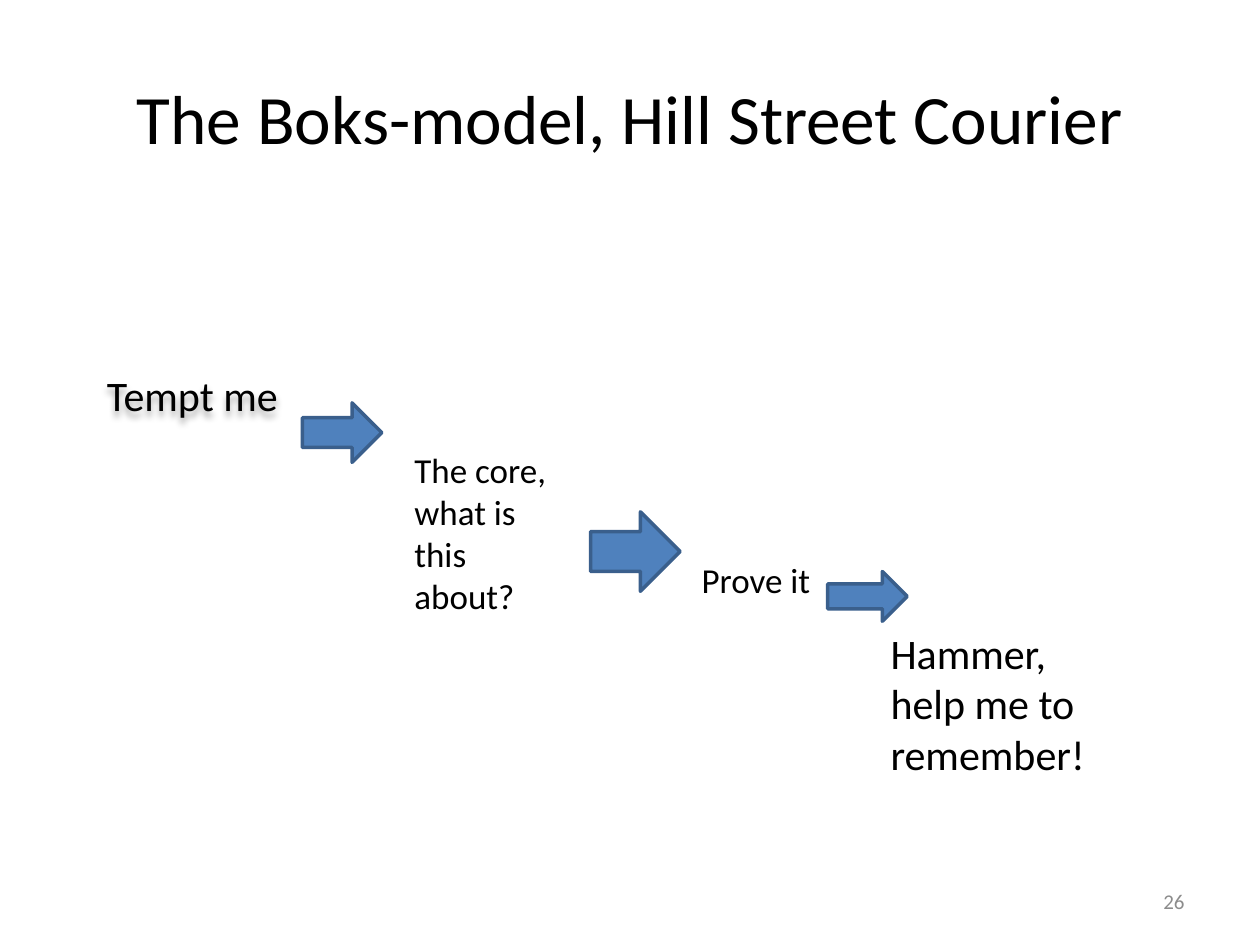
"""Build the Boks-model slide: four steps descending to the right, joined by block arrows."""
from dataclasses import dataclass

import lxml.etree
import pptx
import pptx.dml.color
import pptx.enum.shapes
import pptx.enum.text
import pptx.oxml.ns
import pptx.util

Pt = pptx.util.Pt
Align = pptx.enum.text.PP_ALIGN
Anchor = pptx.enum.text.MSO_ANCHOR
FONT = "Calibri"
COLORS = {"text": "000000", "number": "8C8C8C", "arrow": "4F81BD", "outline": "3A5F8C"}


@dataclass
class Frame:
    left: float
    top: float
    width: float
    height: float

    def lengths(self) -> tuple:
        return tuple(Pt(value) for value in (self.left, self.top, self.width, self.height))


@dataclass
class Label:
    text: str
    frame: Frame
    size: float
    color: str = "text"
    align: Align = Align.LEFT
    anchor: Anchor = Anchor.TOP
    shadow: bool = False


TITLE = Label("The Boks-model, Hill Street Courier", Frame(36, 21.6, 648, 90), 39.6,
              align=Align.CENTER, anchor=Anchor.MIDDLE)
LABELS = [
    Label("Tempt me", Frame(54, 207.4, 136, 36), 24, shadow=True),
    Label("The core, what is this about?", Frame(229.7, 252.7, 102.2, 104.4), 20),
    Label("Prove it", Frame(393.8, 315.4, 102.2, 31.7), 20),
    Label("Hammer, help me to remember!", Frame(501.8, 355, 147.6, 94.3), 24),
    Label("26", Frame(516, 500.5, 168, 28.8), 12, "number", Align.RIGHT, Anchor.MIDDLE),
]
ARROWS = [
    Frame(172.8, 230.2, 45.4, 34),
    Frame(337.5, 292.5, 51.2, 45.4),
    Frame(473, 326.6, 45.4, 28.4),
]


def rgb(name: str) -> pptx.dml.color.RGBColor:
    return pptx.dml.color.RGBColor.from_string(COLORS[name])


def write_label(box, label: Label) -> None:
    box.left, box.top, box.width, box.height = label.frame.lengths()
    frame = box.text_frame
    frame.word_wrap = True
    frame.auto_size = pptx.enum.text.MSO_AUTO_SIZE.NONE
    frame.vertical_anchor = label.anchor
    para = frame.paragraphs[0]
    para.text = label.text
    para.alignment = label.align
    para.font.name = FONT
    para.font.size = Pt(label.size)
    para.font.color.rgb = rgb(label.color)


def add_soft_shadow(box) -> None:
    qn = pptx.oxml.ns.qn
    effects = lxml.etree.SubElement(box.element.spPr, qn("a:effectLst"))
    shadow = lxml.etree.SubElement(effects, qn("a:outerShdw"), blurRad=str(Pt(4)),
                                   dist=str(Pt(3)), dir="5400000", rotWithShape="0")
    color = lxml.etree.SubElement(shadow, qn("a:srgbClr"), val=COLORS["text"])
    lxml.etree.SubElement(color, qn("a:alpha"), val="35000")


def add_label(slide, label: Label) -> None:
    box = slide.shapes.add_textbox(*label.frame.lengths())
    write_label(box, label)
    if label.shadow:
        add_soft_shadow(box)


def add_arrow(slide, frame: Frame) -> None:
    kind = pptx.enum.shapes.MSO_SHAPE.RIGHT_ARROW
    arrow = slide.shapes.add_shape(kind, *frame.lengths())
    arrow.shadow.inherit = False
    arrow.fill.solid()
    arrow.fill.fore_color.rgb = rgb("arrow")
    arrow.line.color.rgb = rgb("outline")
    arrow.line.width = Pt(2)


def main() -> None:
    deck = pptx.Presentation()
    deck.slide_width, deck.slide_height = Pt(720), Pt(540)
    slide = deck.slides.add_slide(deck.slide_layouts.get_by_name("Title Only"))
    write_label(slide.shapes.title, TITLE)
    for label in LABELS:
        add_label(slide, label)
    for frame in ARROWS:
        add_arrow(slide, frame)
    deck.save("out.pptx")


if __name__ == "__main__":
    main()
